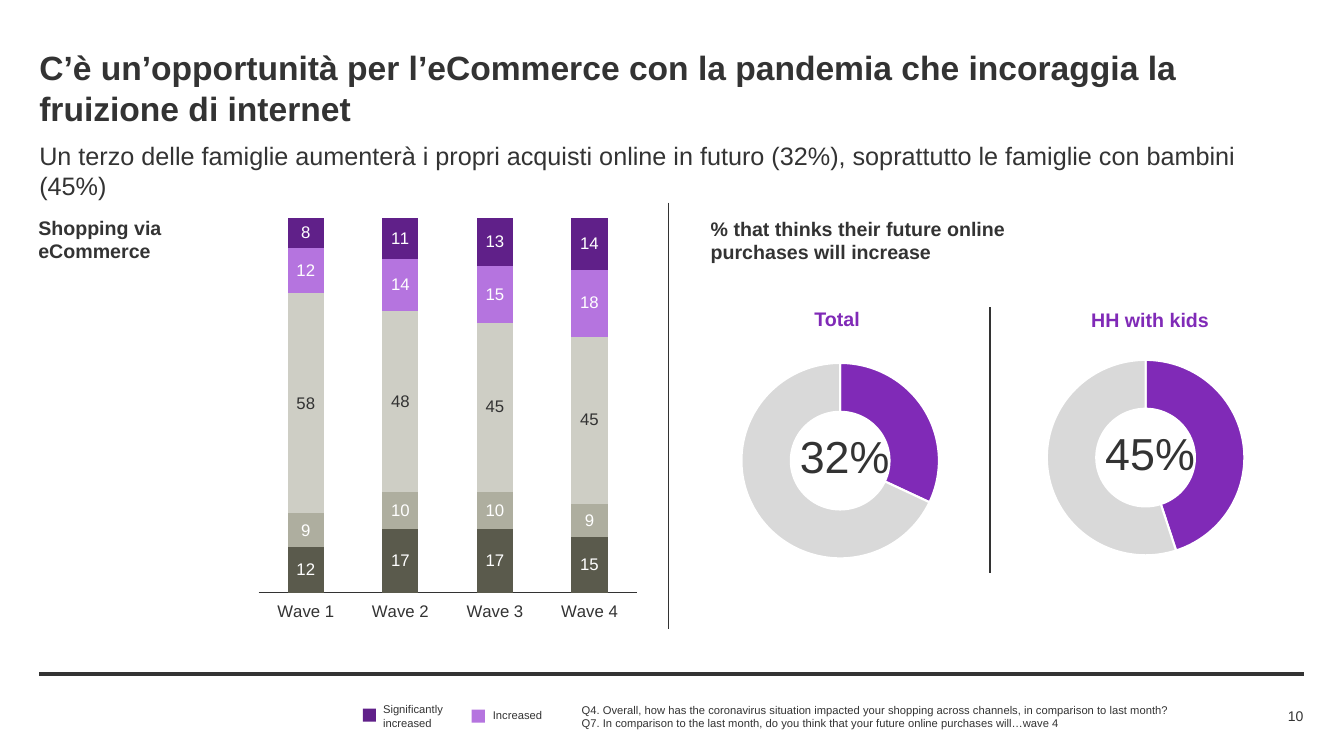
from lxml import etree
from pptx import Presentation
from pptx.chart.data import CategoryChartData
from pptx.dml.color import RGBColor
from pptx.enum.chart import XL_CHART_TYPE, XL_LABEL_POSITION, XL_TICK_LABEL_POSITION, XL_TICK_MARK
from pptx.enum.shapes import MSO_CONNECTOR, MSO_SHAPE
from pptx.enum.text import MSO_ANCHOR, PP_ALIGN
from pptx.oxml.ns import qn
from pptx.util import Inches, Pt

STACKED, DOUGHNUT = XL_CHART_TYPE.COLUMN_STACKED_100, XL_CHART_TYPE.DOUGHNUT
LABEL_CENTER = XL_LABEL_POSITION.CENTER
LABELS_LOW, NO_TICKS = XL_TICK_LABEL_POSITION.LOW, XL_TICK_MARK.NONE
STRAIGHT, RECTANGLE = MSO_CONNECTOR.STRAIGHT, MSO_SHAPE.RECTANGLE
TOP, MIDDLE = MSO_ANCHOR.TOP, MSO_ANCHOR.MIDDLE
LEFT, CENTER, RIGHT = PP_ALIGN.LEFT, PP_ALIGN.CENTER, PP_ALIGN.RIGHT

CELL = 0.1  # the grid has ten columns and ten rows to the inch
FONT = "Arial"
INK, WHITE, GREY = "333333", "FFFFFF", "D9D9D9"
PURPLE, DEEP_PURPLE, LILAC = "802AB7", "602089", "B574DF"

WAVES = ["Wave 1", "Wave 2", "Wave 3", "Wave 4"]
ANSWERS = [  # values by wave, bar colour, label colour
    ([12, 17, 17, 15], "5A5A4C", WHITE),
    ([9, 10, 10, 9], "AEAE9F", WHITE),
    ([58, 48, 45, 45], "CECEC5", INK),
    ([12, 14, 15, 18], LILAC, WHITE),
    ([8, 11, 13, 14], DEEP_PURPLE, WHITE),
]
QUESTIONS = [
    "Q4. Overall, how has the coronavirus situation impacted your shopping across channels, "
    "in comparison to last month?",
    "Q7. In comparison to the last month, do you think that your future online purchases will…wave 4",
]


def color(code):
    return RGBColor.from_string(code)


def grid(*cells):
    return [Inches(cell * CELL) for cell in cells]


def style_font(font, size, code=INK, bold=False):
    font.name, font.size, font.bold = FONT, Pt(size), bold
    font.color.rgb = color(code)


def fill(part, code):
    part.format.fill.solid()
    part.format.fill.fore_color.rgb = color(code)


def add_text(page, area, lines, size, code=INK, bold=False, align=LEFT, anchor=TOP):
    frame = page.shapes.add_textbox(*grid(*area)).text_frame
    frame.word_wrap = True
    frame.vertical_anchor = anchor
    frame.margin_left = frame.margin_right = frame.margin_top = frame.margin_bottom = 0
    for index, line in enumerate(lines):
        para = frame.add_paragraph() if index else frame.paragraphs[0]
        para.text = line
        para.alignment = align
        for span in para.runs:
            style_font(span.font, size, code, bold)


def add_rule(page, start, end, width):
    rule = page.shapes.add_connector(STRAIGHT, *grid(*start, *end))
    rule.line.color.rgb = color(INK)
    rule.line.width = Pt(width)
    etree.SubElement(rule.element.spPr, qn("a:effectLst"))


def add_legend_key(page, left, top, code):
    key = page.shapes.add_shape(RECTANGLE, *grid(left, top, 1.3, 1.3))
    key.shadow.inherit = False
    key.fill.solid()
    key.fill.fore_color.rgb = color(code)
    key.line.fill.background()


def set_plot_area(chart, x, y, w, h):
    """Fix the inner plot area, in shares of the chart's size."""
    area = chart.element.find(".//" + qn("c:plotArea"))
    for old in area.findall(qn("c:layout")):
        area.remove(old)
    layout = etree.Element(qn("c:layout"))
    area.insert(0, layout)
    manual = etree.SubElement(layout, qn("c:manualLayout"))
    settings = {"layoutTarget": "inner", "xMode": "edge", "yMode": "edge", "x": x, "y": y, "w": w, "h": h}
    for tag, value in settings.items():
        etree.SubElement(manual, qn("c:" + tag)).set("val", str(value))


def add_chart(page, kind, area, categories, rows, plot_area):
    data = CategoryChartData(number_format="0")
    data.categories = categories
    for number, values in enumerate(rows, 1):
        data.add_series(f"Series {number}", values)
    chart = page.shapes.add_chart(kind, *grid(*area), data).chart
    chart.has_title = chart.has_legend = False
    style_font(chart.font, 10)
    set_plot_area(chart, *plot_area)
    return chart


def add_wave_chart(page, area):
    rows = [values for values, _, _ in ANSWERS]
    chart = add_chart(page, STACKED, area, WAVES, rows, (0, 0.035, 0.966, 0.87))
    chart.value_axis.visible = False
    chart.value_axis.has_major_gridlines = False
    axis = chart.category_axis
    axis.major_tick_mark = axis.minor_tick_mark = NO_TICKS
    axis.tick_label_position = LABELS_LOW
    axis.format.line.color.rgb = color(INK)
    axis.format.line.width = Pt(0.75)
    style_font(axis.tick_labels.font, 12)
    plot = chart.plots[0]
    plot.gap_width, plot.overlap, plot.vary_by_categories = 161, 100, False
    for series, (_, bar_color, label_color) in zip(plot.series, ANSWERS):
        fill(series, bar_color)
        labels = series.data_labels
        labels.show_value = True
        labels.position = LABEL_CENTER
        labels.number_format, labels.number_format_is_linked = "0", False
        style_font(labels.font, 12, label_color)


def add_share_ring(page, left, top, share):
    """Draw a doughnut with its percentage in the middle."""
    chart = add_chart(page, DOUGHNUT, (left, top, 21, 19.6), ["1", "2"],
                      [[share, 100 - share]], (0.04, 0, 0.935, 1))
    chart.element.find(".//" + qn("c:holeSize")).set("val", "82")
    plot = chart.plots[0]
    plot.vary_by_categories = True
    for index, code in enumerate((PURPLE, GREY)):
        point = plot.series[0].points[index]
        fill(point, code)
        point.format.line.color.rgb = color(WHITE)
        point.format.line.width = Pt(1.5)
    add_text(page, (left + 4.6, top + 7.05, 13, 4.5), [f"{share}%"], 32, align=CENTER, anchor=MIDDLE)


def main():
    deck = Presentation()
    deck.slide_width, deck.slide_height = grid(133.33, 75)
    page = deck.slides.add_slide(deck.slide_layouts[6])

    add_text(page, (3.9, 4.7, 125.4, 4.4),
             ["C’è un’opportunità per l’eCommerce con la pandemia che incoraggia la fruizione di internet"],
             24, bold=True)
    add_text(page, (3.9, 13.9, 123.7, 4.3),
             ["Un terzo delle famiglie aumenterà i propri acquisti online in futuro (32%), "
              "soprattutto le famiglie con bambini (45%)"], 18)

    add_text(page, (3.8, 21.4, 16.6, 11.8), ["Shopping via\veCommerce"], 14, bold=True)
    add_wave_chart(page, (25.6, 20.1, 38.9, 42.8))
    add_rule(page, (66.3, 20.1), (66.3, 62.4), 1)

    add_text(page, (70.5, 21.5, 31, 4.7),
             ["% that thinks their future online purchases will increase"], 14, bold=True)
    add_text(page, (80.8, 30.4, 21, 2.4), ["Total"], 14, PURPLE, True)
    add_text(page, (103.6, 30.5, 21, 2.4), ["HH with kids"], 14, PURPLE, True, CENTER)
    add_share_ring(page, 72.7, 35.9, 32)
    add_share_ring(page, 103, 35.6, 45)
    add_rule(page, (98.2, 30.5), (98.2, 56.8), 1)

    add_rule(page, (3.9, 66.9), (129.4, 66.9), 3)
    add_legend_key(page, 36, 70.3, DEEP_PURPLE)
    add_text(page, (38, 69.7, 8.9, 2.7), ["Significantly increased"], 8)
    add_legend_key(page, 46.8, 70.4, LILAC)
    add_text(page, (48.9, 70.3, 10.6, 1.3), ["Increased"], 8)
    add_text(page, (57.7, 69.9, 60, 2.4), QUESTIONS, 8, anchor=MIDDLE)
    add_text(page, (118.7, 69.9, 10.6, 2.2), ["10"], 10, align=RIGHT, anchor=MIDDLE)
    deck.save("out.pptx")


if __name__ == "__main__":
    main()
